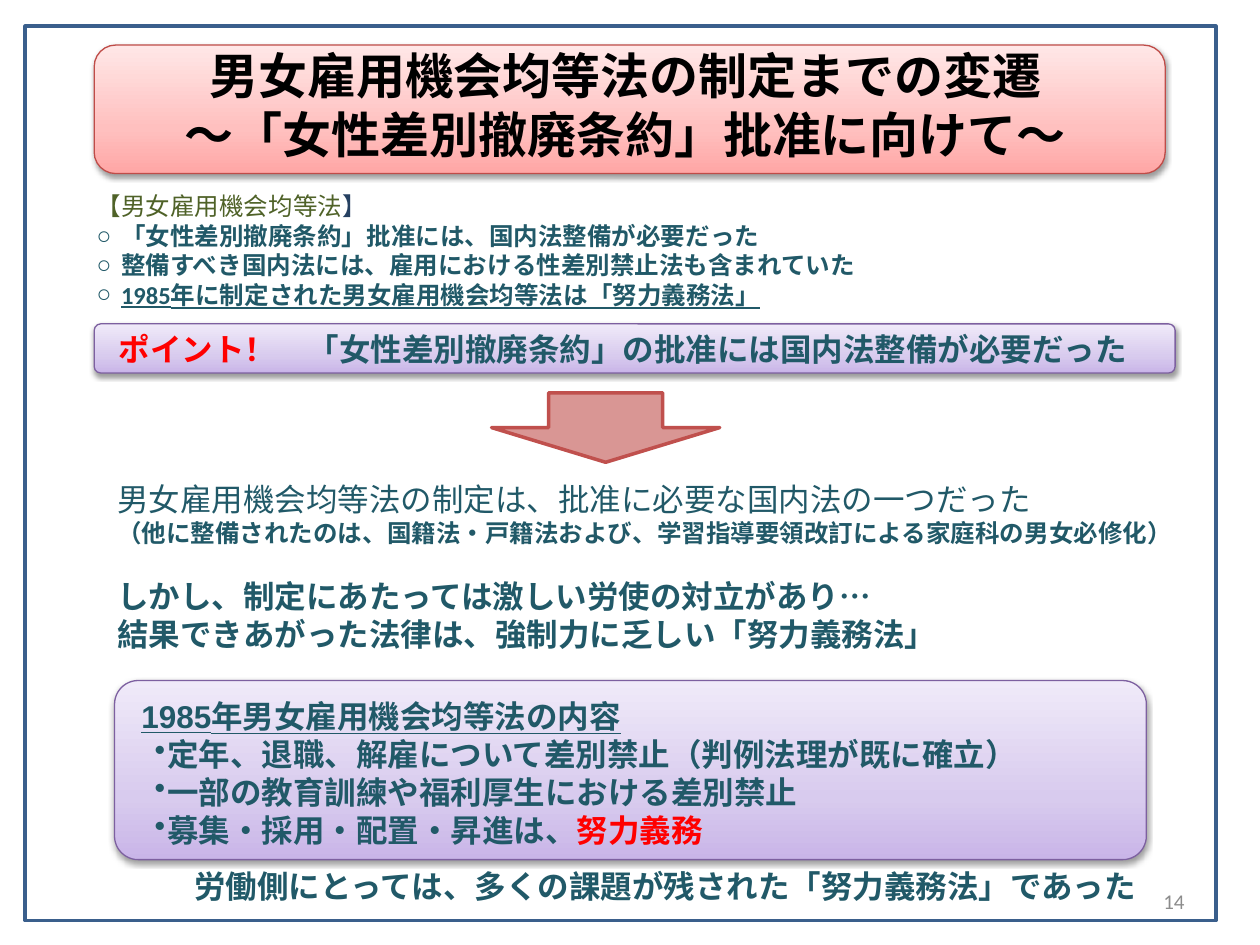
from dataclasses import dataclass

from lxml import etree
from pptx import Presentation
from pptx.dml.color import RGBColor
from pptx.enum.shapes import MSO_SHAPE
from pptx.enum.text import MSO_ANCHOR, MSO_AUTO_SIZE, PP_ALIGN
from pptx.oxml import parse_xml
from pptx.oxml.ns import qn
from pptx.util import Cm, Pt

LEFT, CENTER, RIGHT = PP_ALIGN.LEFT, PP_ALIGN.CENTER, PP_ALIGN.RIGHT
TOP, MIDDLE = MSO_ANCHOR.TOP, MSO_ANCHOR.MIDDLE
ROUNDED, RECTANGLE = MSO_SHAPE.ROUNDED_RECTANGLE, MSO_SHAPE.RECTANGLE
DOWN_ARROW = MSO_SHAPE.DOWN_ARROW
NO_AUTOFIT = MSO_AUTO_SIZE.NONE
TWO_CONTENT = 3
DRAWING = "http://schemas.openxmlformats.org/drawingml/2006/main"


@dataclass(frozen=True)
class Theme:
    """Colours, type sizes and fonts of the slide."""
    black: str = "000000"
    teal: str = "215968"
    olive: str = "4F6228"
    navy: str = "254061"
    red: str = "FF0000"
    grey: str = "8C8C8C"
    frame: str = "3A5F8C"
    arrow_fill: str = "D99694"
    arrow_line: str = "C0504D"
    pink_line: str = "BF4C48"
    purple_line: str = "7D60A0"
    pink: tuple = ("FFA6A5", "FFC0BF", "FFE7E7")
    purple: tuple = ("C9B5E8", "D8CBEE", "F0EAF9")
    title: int = 28
    body: int = 18
    note: int = 14
    number: int = 12
    font: str = "Calibri"
    strong_font: str = "Arial"


THEME = Theme()


@dataclass(frozen=True)
class Span:
    """A stretch of text in one format."""
    text: str
    color: str = THEME.teal
    size: int = THEME.body
    bold: bool = True
    underline: bool = False
    font: str = THEME.font


@dataclass(frozen=True)
class Line:
    """One paragraph with its spans, bullet and spacing."""
    spans: tuple
    align: PP_ALIGN = LEFT
    bullet: str = ""
    margin: float = 0
    hanging: float = 0
    before: int = 0


def set_bullet(para, line):
    """Give a paragraph its bullet and hanging indent."""
    properties = para._p.get_or_add_pPr()
    properties.set("marL", str(Cm(line.margin)))
    properties.set("indent", str(-Cm(line.hanging)))
    kind = "buChar" if line.bullet else "buNone"
    bullet = etree.SubElement(properties, qn(f"a:{kind}"))
    if line.bullet:
        bullet.set("char", line.bullet)


def write(box, lines, anchor=TOP, insets=(0.25, 0.13, 0.25, 0.13)):
    """Fill a shape or placeholder with formatted lines."""
    frame = box.text_frame
    frame.word_wrap = True
    frame.auto_size = NO_AUTOFIT
    frame.vertical_anchor = anchor
    frame.margin_left, frame.margin_top, frame.margin_right, frame.margin_bottom = map(Cm, insets)
    for index, line in enumerate(lines):
        para = frame.add_paragraph() if index else frame.paragraphs[0]
        para.alignment = line.align
        para.space_before = Pt(line.before)
        set_bullet(para, line)
        for span in line.spans:
            run = para.add_run()
            run.text = span.text
            run.font.name = span.font
            run.font.size = Pt(span.size)
            run.font.bold = span.bold
            run.font.underline = span.underline
            run.font.color.rgb = RGBColor.from_string(span.color)


def fill_placeholder(box, place, lines, anchor=TOP):
    """Move a placeholder to the front and write into it."""
    box.left, box.top, box.width, box.height = map(Cm, place)
    box.element.getparent().append(box.element)
    write(box, lines, anchor)


def add_text(page, place, lines, anchor=TOP):
    """Add a free text box."""
    write(page.shapes.add_textbox(*map(Cm, place)), lines, anchor)


def add_outline(page, kind, place, line_color, line_width, fill=None):
    """Add a preset shape with a plain fill or none."""
    shape = page.shapes.add_shape(kind, *map(Cm, place))
    shape.shadow.inherit = False
    shape.line.color.rgb = RGBColor.from_string(line_color)
    shape.line.width = Pt(line_width)
    if fill:
        shape.fill.solid()
        shape.fill.fore_color.rgb = RGBColor.from_string(fill)
    else:
        shape.fill.background()
    return shape


def add_panel(page, place, colors, line_color, rounding):
    """Add a rounded panel with a vertical gradient and a soft shadow."""
    panel = add_outline(page, ROUNDED, place, line_color, 0.75)
    panel.adjustments[0] = rounding
    stops = "".join(
        f'<a:gs pos="{position * 1000}"><a:srgbClr val="{color}"/></a:gs>'
        for position, color in zip((0, 35, 100), colors)
    )
    gradient = parse_xml(
        f'<a:gradFill xmlns:a="{DRAWING}" rotWithShape="1"><a:gsLst>{stops}</a:gsLst>'
        '<a:lin ang="16200000" scaled="0"/></a:gradFill>'
    )
    properties = panel.element.spPr
    properties.replace(properties.find(qn("a:noFill")), gradient)
    properties.find(qn("a:effectLst")).append(parse_xml(
        f'<a:outerShdw xmlns:a="{DRAWING}" blurRad="{Pt(3.1)}" dist="{Pt(1.6)}" dir="5400000" '
        'rotWithShape="0"><a:srgbClr val="000000"><a:alpha val="38000"/></a:srgbClr></a:outerShdw>'
    ))
    return panel


def add_title(page):
    """Add the two-line title on its pink panel."""
    add_panel(page, (1.9, 0.91, 21.59, 2.59), THEME.pink, THEME.pink_line, 0.167)
    titles = ("男女雇用機会均等法の制定までの変遷", "～「女性差別撤廃条約」批准に向けて～")
    lines = [Line((Span(text, THEME.black, THEME.title, font=THEME.strong_font),), CENTER)
             for text in titles]
    fill_placeholder(page.shapes.title, (1.9, 0.91, 21.41, 2.39), lines, MIDDLE)


def add_law_list(page):
    """Add the list on the equal opportunity law."""
    lines = [Line((Span("【男女雇用機会均等法", THEME.olive, THEME.note, False),
                   Span("】", THEME.navy, THEME.note, False)))]
    facts = (
        ("「女性差別撤廃条約」批准には、国内法整備が必要だった", False),
        ("整備すべき国内法には、雇用における性差別禁止法も含まれていた", False),
        ("1985年に制定された男女雇用機会均等法は「努力義務法」", True),
    )
    lines += [Line((Span(text, size=THEME.note, underline=underline),),
                   bullet="○", margin=0.49, hanging=0.49) for text, underline in facts]
    fill_placeholder(page.placeholders[1], (1.7, 3.73, 22.2, 2.64), lines)


def add_point(page):
    """Add the key point banner and the arrow below it."""
    panel = add_panel(page, (1.9, 6.53, 21.79, 0.99), THEME.purple, THEME.purple_line, 0.132)
    spans = (Span("ポイント！\u3000".replace("\u3000", "　"), THEME.red),
             Span("「女性差別撤廃条約」の批准には国内法整備が必要だった"))
    write(panel, [Line(spans)], MIDDLE, (0.46, 0, 0, 0))
    add_outline(page, DOWN_ARROW, (9.91, 7.92, 4.6, 1.4), THEME.arrow_line, 2, THEME.arrow_fill)


def add_explanation(page):
    """Add the account of how the law came about."""
    lines = [
        Line((Span("男女雇用機会均等法の制定は、批准に必要な国内法の一つだった", bold=False),)),
        Line((Span("（他に整備されたのは、国籍法・戸籍法および、学習指導要領改訂による家庭科の男女必修化）",
                   size=THEME.note),)),
        Line((Span("しかし、制定にあたっては激しい労使の対立があり…", font=THEME.strong_font),), before=17),
        Line((Span("結果できあがった法律は、強制力に乏しい「努力義務法」", font=THEME.strong_font),)),
    ]
    fill_placeholder(page.placeholders[2], (2.11, 9.55, 22, 4), lines)


def add_contents(page):
    """Add the panel with the contents of the 1985 law."""
    panel = add_panel(page, (2.31, 13.72, 20.8, 3.61), THEME.purple, THEME.purple_line, 0.132)
    heading = Span("1985年男女雇用機会均等法の内容", underline=True, font=THEME.strong_font)
    items = (
        (Span("定年、退職、解雇について差別禁止（判例法理が既に確立）", font=THEME.strong_font),),
        (Span("一部の教育訓練や福利厚生における差別禁止", font=THEME.strong_font),),
        (Span("募集・採用・配置・昇進は、", font=THEME.strong_font),
         Span("努力義務", THEME.red, font=THEME.strong_font)),
    )
    lines = [Line((heading,))]
    lines += [Line(spans, bullet="•", margin=0.52, hanging=0.25) for spans in items]
    write(panel, lines, TOP, (0.4, 0.2, 0.2, 0))


def main():
    """Build the slide and save the deck."""
    deck = Presentation()
    deck.slide_width, deck.slide_height = Cm(25.4), Cm(19.05)
    page = deck.slides.add_slide(deck.slide_layouts[TWO_CONTENT])
    add_outline(page, RECTANGLE, (0.51, 0.53, 24, 18.03), THEME.frame, 2)
    add_title(page)
    add_law_list(page)
    add_point(page)
    add_explanation(page)
    add_contents(page)
    closing = Span("労働側にとっては、多くの課題が残された「努力義務法」であった", font=THEME.strong_font)
    add_text(page, (2.41, 17.35, 22, 1.02), [Line((closing,), CENTER)], MIDDLE)
    number = Span("14", THEME.grey, THEME.number, False)
    add_text(page, (18.21, 17.65, 5.92, 1.02), [Line((number,), RIGHT)], MIDDLE)
    deck.save("out.pptx")


if __name__ == "__main__":
    main()
